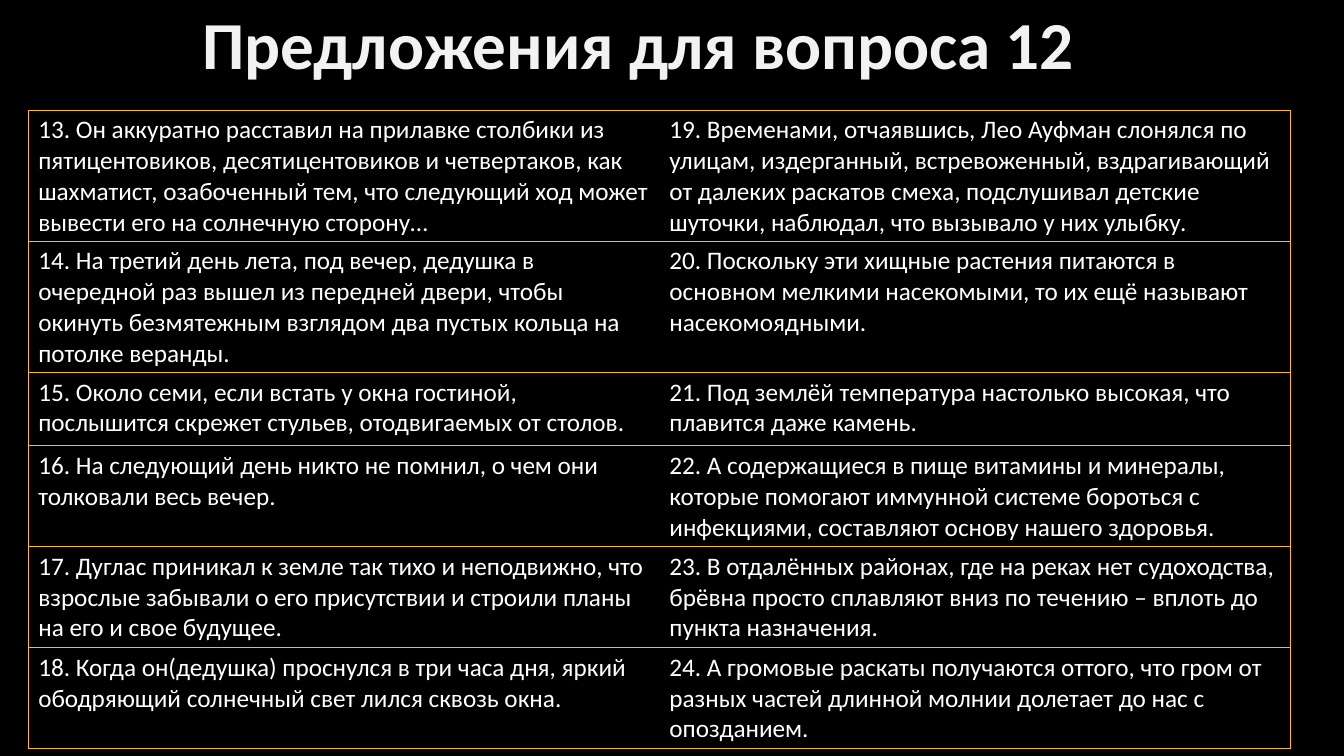
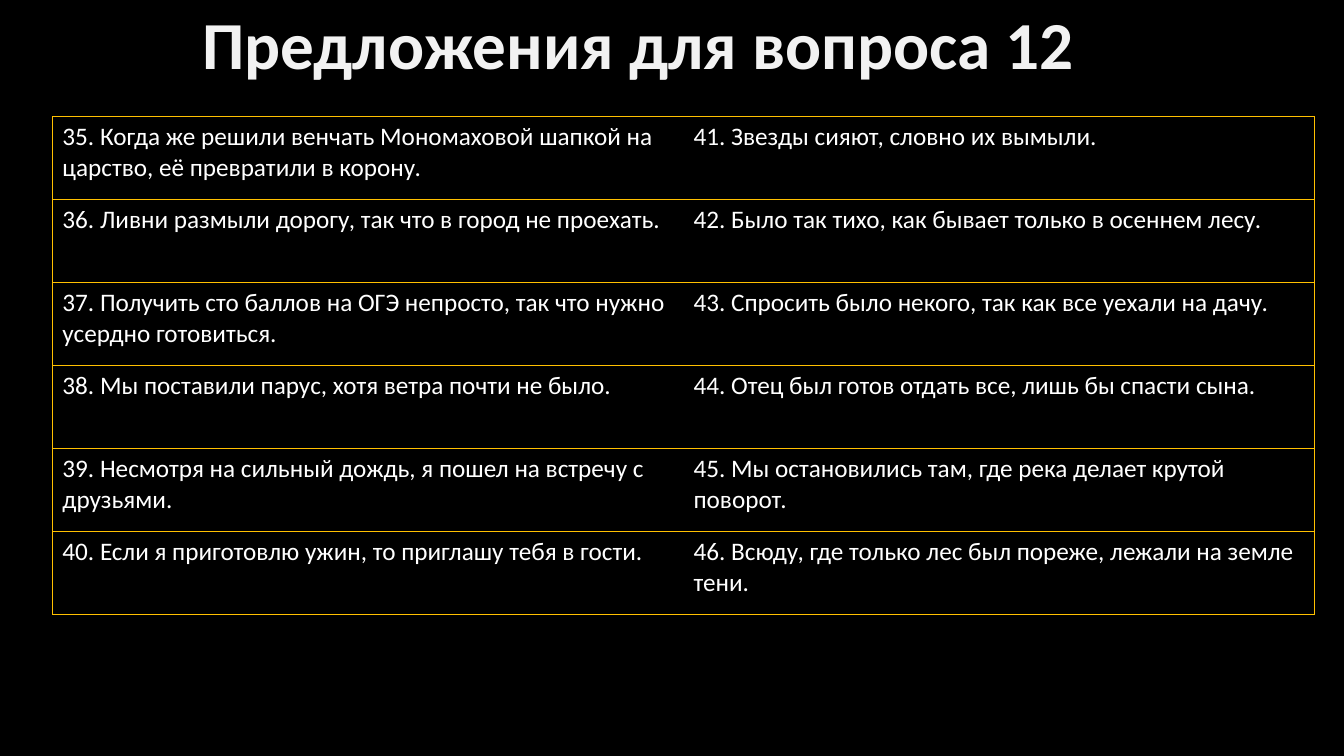
import dataclasses
import lxml.etree
import pptx
import pptx.dml.color
import pptx.enum.text
import pptx.oxml.ns
import pptx.util


@dataclasses.dataclass(frozen=True)
class Theme:
    back: str = "000000"
    head: str = "F2F2F2"
    body: str = "FFFFFF"
    rule: str = "FFC000"
    font: str = "Calibri"
    big: int = 48
    small: int = 18
    line: float = 0.5


theme = Theme()
color = pptx.dml.color.RGBColor.from_string
deck = pptx.Presentation()
deck.slide_width = pptx.util.Inches(13.33)
deck.slide_height = pptx.util.Inches(7.5)

# Grid: one column and one row are a hundredth of the slide
col = deck.slide_width / 100
row = deck.slide_height / 100


def write(frame, text, size=theme.small, ink=theme.body, bold=False, space=1.0):
    frame.word_wrap = True
    para = frame.paragraphs[0]
    para.line_spacing = space
    run = para.add_run()
    run.text = text
    run.font.name = theme.font
    run.font.size = pptx.util.Pt(size)
    run.font.bold = bold
    run.font.color.rgb = color(ink)


def edge(cell, side, shown):
    qn = pptx.oxml.ns.qn
    props = cell._tc.get_or_add_tcPr()
    line = lxml.etree.SubElement(props, qn("a:ln" + side))
    line.set("w", str(int(pptx.util.Pt(theme.line))))
    if shown:
        fill = lxml.etree.SubElement(line, qn("a:solidFill"))
        lxml.etree.SubElement(fill, qn("a:srgbClr")).set("val", theme.rule)
    else:
        lxml.etree.SubElement(line, qn("a:noFill"))


title = "Предложения для вопроса 12"

# Each page: table left, top and row height in grid units, then its rows
pages = [
    (2.1, 14.53, 9.73, [
        ("13. Он аккуратно расставил на прилавке столбики из пятицентовиков, "
         "десятицентовиков и четвертаков, как шахматист, озабоченный тем, что "
         "следующий ход может вывести его на солнечную сторону…",
         "19. Временами, отчаявшись, Лео Ауфман слонялся по улицам, издерганный, "
         "встревоженный, вздрагивающий от далеких раскатов смеха, подслушивал "
         "детские шуточки, наблюдал, что вызывало у них улыбку."),
        ("14. На третий день лета, под вечер, дедушка в очередной раз вышел из "
         "передней двери, чтобы окинуть безмятежным взглядом два пустых кольца "
         "на потолке веранды.",
         "20. Поскольку эти хищные растения питаются в основном мелкими "
         "насекомыми, то их ещё называют насекомоядными."),
        ("15. Около семи, если встать у окна гостиной, послышится скрежет "
         "стульев, отодвигаемых от столов.",
         "21. Под землёй температура настолько высокая, что плавится даже камень."),
        ("16. На следующий день никто не помнил, о чем они толковали весь вечер.",
         "22. А содержащиеся в пище витамины и минералы, которые помогают "
         "иммунной системе бороться с инфекциями, составляют основу нашего "
         "здоровья."),
        ("17. Дуглас приникал к земле так тихо и неподвижно, что взрослые "
         "забывали о его присутствии и строили планы на его и свое будущее.",
         "23. В отдалённых районах, где на реках нет судоходства, брёвна просто "
         "сплавляют вниз по течению – вплоть до пункта назначения."),
        ("18. Когда он(дедушка) проснулся в три часа дня, яркий ободряющий "
         "солнечный свет лился сквозь окна.",
         "24. А громовые раскаты получаются оттого, что гром от разных частей "
         "длинной молнии долетает до нас с опозданием."),
    ]),
    (3.9, 15.4, 10.98, [
        ("35. Когда же решили венчать Мономаховой шапкой на царство, её "
         "превратили в корону.",
         "41. Звезды сияют, словно их вымыли."),
        ("36. Ливни размыли дорогу, так что в город не проехать.",
         "42. Было так тихо, как бывает только в осеннем лесу."),
        ("37. Получить сто баллов на ОГЭ непросто, так что нужно усердно "
         "готовиться.",
         "43. Спросить было некого, так как все уехали на дачу."),
        ("38. Мы поставили парус, хотя ветра почти не было.",
         "44. Отец был готов отдать все, лишь бы спасти сына."),
        ("39. Несмотря на сильный дождь, я пошел на встречу с друзьями.",
         "45. Мы остановились там, где река делает крутой поворот."),
        ("40. Если я приготовлю ужин, то приглашу тебя в гости.",
         "46. Всюду, где только лес был пореже, лежали на земле тени."),
    ]),
]

for left, top, high, lines in pages:
    # Black page
    slide = deck.slides.add_slide(deck.slide_layouts[6])
    slide.background.fill.solid()
    slide.background.fill.fore_color.rgb = color(theme.back)

    # Title
    box = slide.shapes.add_textbox(
        int(14.33 * col), int(-3.47 * row), int(85 * col), int(15.2 * row))
    write(box.text_frame, title, size=theme.big, ink=theme.head,
          bold=True, space=0.9)
    box.text_frame.vertical_anchor = pptx.enum.text.MSO_ANCHOR.BOTTOM

    # Sentences in two columns, ruled between rows and around the outside
    grid = slide.shapes.add_table(
        len(lines), 2, int(left * col), int(top * row),
        int(93.92 * col), int(high * row) * len(lines)).table
    grid.first_row = grid.horz_banding = False
    for r, pair in enumerate(lines):
        for c, text in enumerate(pair):
            cell = grid.cell(r, c)
            write(cell.text_frame, text)
            for side, shown in (("L", c == 0), ("R", c == 1),
                                ("T", True), ("B", True)):
                edge(cell, side, shown)
            cell.fill.solid()
            cell.fill.fore_color.rgb = color(theme.back)

deck.save("out.pptx")
